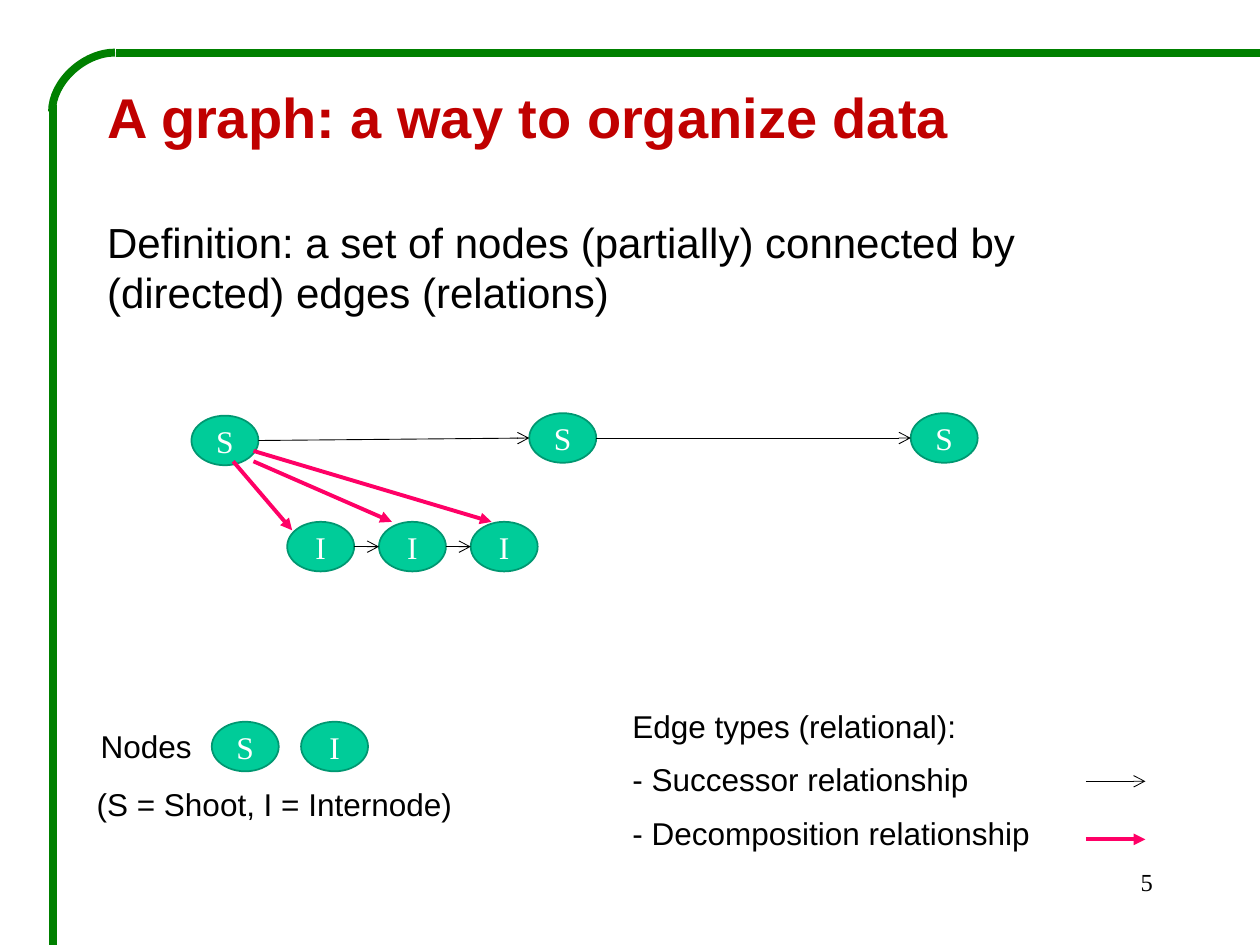
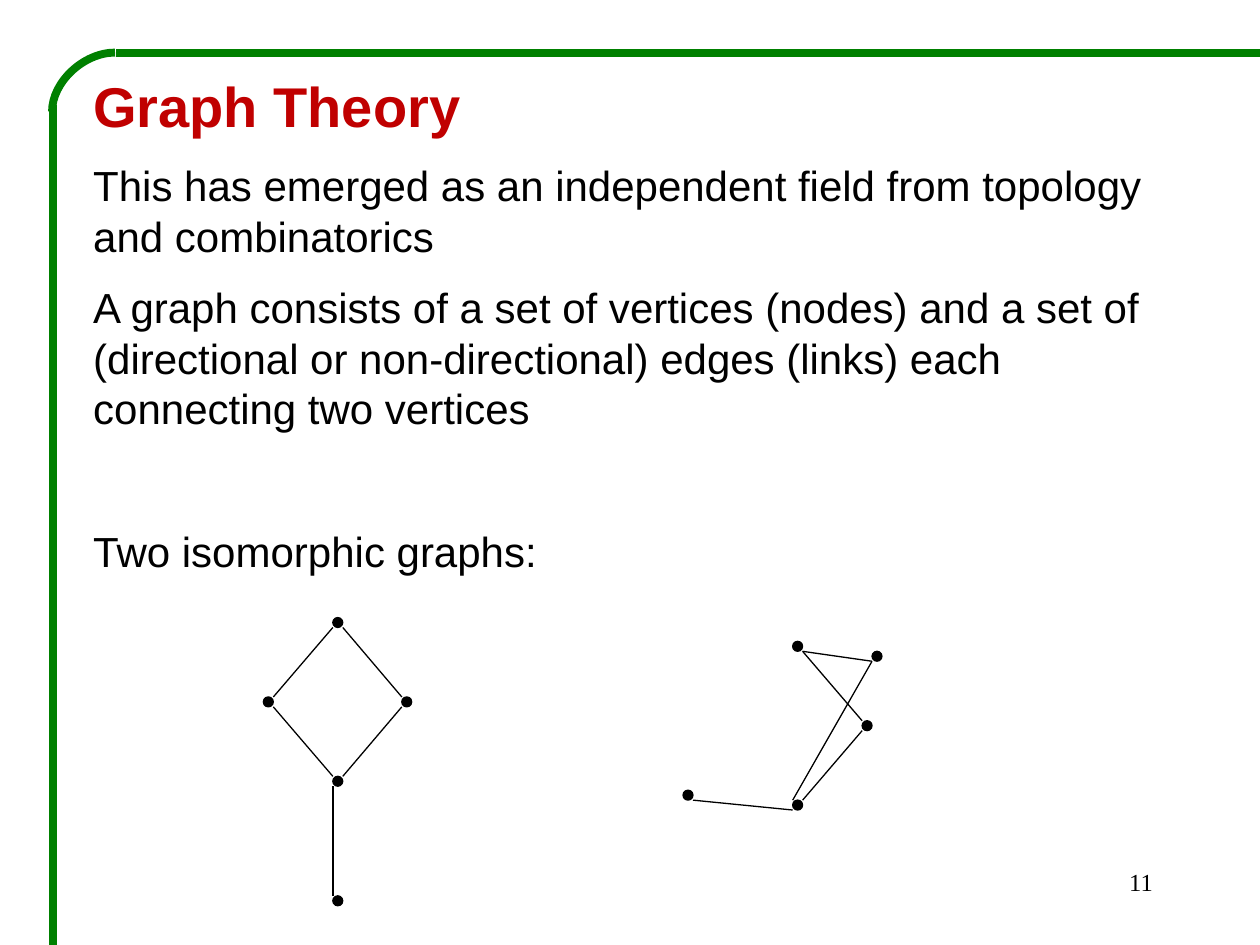
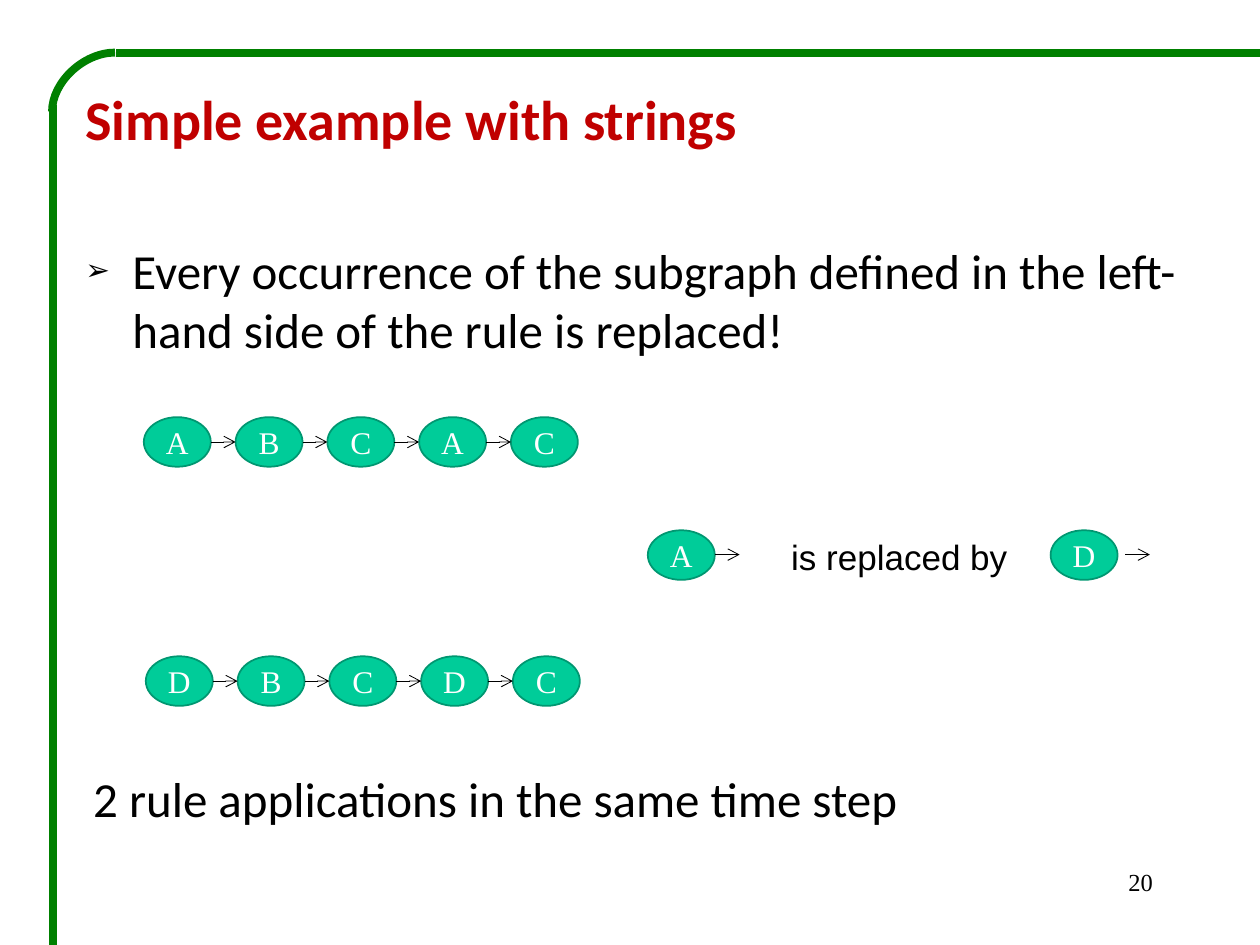
import pptx
import pptx.dml.color
import pptx.enum.shapes
import pptx.enum.text
import pptx.oxml.ns
import pptx.util
from lxml import etree
from pptx.util import Cm

# Shared look
RED, BLACK, WHITE = "C00000", "000000", "FFFFFF"
GREEN, TEAL, DARK_TEAL, PINK = "008000", "00CC99", "009771", "FF0066"
SANS, HUMANIST, SERIF = "Arial", "Calibri", "Times New Roman"

NODE_WIDTH, NODE_HEIGHT, NODE_PITCH = 1.35, 1.0, 1.85
DOT_SIZE = 0.2
ARROW_LENGTH = NODE_PITCH - NODE_WIDTH

# Corners of a dot, as shares of its width and height
TOP_LEFT, TOP_RIGHT, BOTTOM_LEFT, BOTTOM_RIGHT = (0, 0), (1, 0), (0, 1), (1, 1)


def color(hex_code):
    return pptx.dml.color.RGBColor.from_string(hex_code)


def sub(parent, tag, **attributes):
    return etree.SubElement(parent, pptx.oxml.ns.qn(tag), attributes)


# Text
def add_span(para, text, size, font=SANS, hex_code=BLACK, bold=False):
    span = para.add_run()
    span.text = text
    span.font.size = pptx.util.Pt(size)
    span.font.name = font
    span.font.bold = bold
    span.font.color.rgb = color(hex_code)


def add_text_box(page, left, top, width, height, wrap=True):
    frame = page.shapes.add_textbox(Cm(left), Cm(top), Cm(width), Cm(height)).text_frame
    frame.word_wrap = wrap
    return frame


def add_para(frame, text, size, gap=0, **style):
    """Fill the empty first paragraph, or start a new one after a gap in points."""
    para = frame.paragraphs[0]
    if para.runs:
        para = frame.add_paragraph()
    para.space_before = pptx.util.Pt(gap)
    add_span(para, text, size, **style)
    return para


def add_title(frame, text, font=SANS):
    add_para(frame, text, 32, font=font, hex_code=RED, bold=True)


def add_bullet(para, char, percent, indent):
    properties = para._p.get_or_add_pPr()
    properties.set("marL", str(Cm(indent)))
    properties.set("indent", str(-Cm(indent)))
    sub(properties, "a:buSzPct", val=str(percent * 1000))
    sub(properties, "a:buFont", typeface=SANS)
    sub(properties, "a:buChar", char=char)


# Lines
def add_line(page, start, end, hex_code=BLACK, width=0.75, arrow=None,
             kind=pptx.enum.shapes.MSO_CONNECTOR.STRAIGHT):
    line = page.shapes.add_connector(kind, *(Cm(value) for value in (*start, *end)))
    line.line.color.rgb = color(hex_code)
    line.line.width = pptx.util.Pt(width)
    if arrow:
        sub(line.line._get_or_add_ln(), "a:tailEnd", type=arrow)
    sub(line._element.spPr, "a:effectLst")
    return line


def add_successor(page, left, middle, length=ARROW_LENGTH, rise=0):
    add_line(page, (left, middle), (left + length, middle - rise), width=0.5, arrow="arrow")


def add_decomposition(page, start, end):
    add_line(page, start, end, PINK, 2.25, "triangle")


# Nodes
def add_ellipse(page, left, top, width, height, fill, outline, outline_width):
    ellipse = page.shapes.add_shape(
        pptx.enum.shapes.MSO_SHAPE.OVAL, Cm(left), Cm(top), Cm(width), Cm(height))
    ellipse.shadow.inherit = False
    ellipse.fill.solid()
    ellipse.fill.fore_color.rgb = color(fill)
    ellipse.line.color.rgb = color(outline)
    ellipse.line.width = pptx.util.Pt(outline_width)
    return ellipse


def add_node(page, letter, left, top):
    node = add_ellipse(page, left, top, NODE_WIDTH, NODE_HEIGHT, TEAL, DARK_TEAL, 1)
    frame = node.text_frame
    frame.word_wrap = False
    frame.vertical_anchor = pptx.enum.text.MSO_ANCHOR.MIDDLE
    para = add_para(frame, letter, 18, font=SERIF, hex_code=WHITE)
    para.alignment = pptx.enum.text.PP_ALIGN.CENTER


def add_chain(page, letters, left, top):
    for index, letter in enumerate(letters):
        node_left = left + index * NODE_PITCH
        add_node(page, letter, node_left, top)
        if index:
            add_successor(page, node_left - ARROW_LENGTH, top + NODE_HEIGHT / 2)


def add_dot_graph(page, dots, edges):
    for left, top in dots:
        add_ellipse(page, left, top, DOT_SIZE, DOT_SIZE, BLACK, BLACK, 0.75)
    for ends in edges:
        start, end = (
            [place + DOT_SIZE * share for place, share in zip(dots[dot], corner)]
            for dot, corner in ends)
        add_line(page, start, end)


# Page with green frame and number
def add_page(deck, number):
    page = deck.slides.add_slide(deck.slide_layouts[6])
    add_line(page, (25.4, 1.07), (2.34, 1.07), GREEN, 4.5)
    add_line(page, (1.07, 2.11), (1.07, 19.05), GREEN, 4.5)
    corner = add_line(page, (1.09, 1.02), (2.28, 2.29), GREEN, 4.5,
                      kind=pptx.enum.shapes.MSO_CONNECTOR.CURVE)
    properties = corner._element.spPr
    properties.find(pptx.oxml.ns.qn("a:prstGeom")).set("prst", "curvedConnector2")
    properties.find(pptx.oxml.ns.qn("a:xfrm")).set("rot", str(270 * 60000))
    para = add_para(add_text_box(page, 18.21, 17.35, 5.28, 1.27), str(number), 14, font=SERIF)
    para.alignment = pptx.enum.text.PP_ALIGN.RIGHT
    return page


def add_definition_page(deck):
    page = add_page(deck, 5)
    frame = add_text_box(page, 1.91, 1.52, 22.6, 5.03)
    frame.vertical_anchor = pptx.enum.text.MSO_ANCHOR.MIDDLE
    add_title(frame, "A graph: a way to organize data")
    add_para(frame, "Definition: a set of nodes (partially) connected by "
                    "(directed) edges (relations)", 24, gap=38)

    # Shoots and their internodes
    for left, top in ((3.86, 8.38), (10.67, 8.33), (18.36, 8.33)):
        add_node(page, "S", left, top)
    add_successor(page, 5.21, 8.88, 5.46, rise=0.05)
    add_successor(page, 12.02, 8.83, 6.34)
    add_chain(page, "III", 5.79, 10.52)
    add_decomposition(page, (5.11, 9.3), (7.9, 10.52))
    add_decomposition(page, (4.7, 9.3), (5.89, 10.69))
    add_decomposition(page, (5.11, 9.09), (9.91, 10.52))

    # Legend of nodes
    add_para(add_text_box(page, 1.78, 14.53, 2.36, 1.02, wrap=False), "Nodes", 18)
    add_node(page, "S", 4.27, 14.55)
    add_node(page, "I", 6.07, 14.55)
    add_para(add_text_box(page, 1.7, 15.7, 9.2, 1.02), "(S = Shoot, I = Internode)", 18)

    # Legend of edges
    frame = add_text_box(page, 12.5, 14.12, 9.2, 3.33)
    add_para(frame, "Edge types (relational):", 18)
    for relation in ("Successor", "Decomposition"):
        add_para(frame, f"- {relation} relationship", 18, gap=9)
    add_successor(page, 21.89, 15.75, 1.2)
    add_decomposition(page, (21.89, 16.92), (23.09, 16.92))


def add_theory_page(deck):
    page = add_page(deck, 11)
    frame = add_text_box(page, 1.63, 1.32, 23.06, 10.85)
    add_title(frame, "Graph Theory")
    add_para(frame, "This has emerged as an independent field from topology "
                    "and combinatorics", 24, gap=12)
    add_para(frame, "A graph consists of a set of vertices (nodes) and a set of "
                    "(directional or non-directional) edges (links) each "
                    "connecting two vertices", 24, gap=12)
    add_para(frame, "Two isomorphic graphs:", 24, gap=53)

    # Diamond with a tail
    add_dot_graph(
        page,
        [(6.71, 12.45), (5.31, 14.05), (8.1, 14.05), (6.71, 15.65), (6.71, 18.06)],
        [((0, BOTTOM_LEFT), (1, TOP_RIGHT)), ((0, BOTTOM_RIGHT), (2, TOP_LEFT)),
         ((1, BOTTOM_RIGHT), (3, TOP_LEFT)), ((2, BOTTOM_LEFT), (3, TOP_RIGHT)),
         ((3, BOTTOM_LEFT), (4, TOP_LEFT))])
    # Same graph with crossing edges
    add_dot_graph(
        page,
        [(15.98, 12.93), (17.58, 13.13), (17.38, 14.53), (15.98, 16.13), (13.77, 15.93)],
        [((0, BOTTOM_RIGHT), (1, BOTTOM_LEFT)), ((0, BOTTOM_RIGHT), (2, TOP_LEFT)),
         ((1, BOTTOM_LEFT), (3, TOP_LEFT)), ((2, BOTTOM_LEFT), (3, TOP_RIGHT)),
         ((3, BOTTOM_LEFT), (4, BOTTOM_RIGHT))])


def add_strings_page(deck):
    page = add_page(deck, 20)
    frame = add_text_box(page, 1.47, 1.57, 22.86, 5.66)
    add_title(frame, "Simple example with strings", HUMANIST)
    para = add_para(frame, "Every occurrence of the subgraph defined in the left-hand "
                           "side of the rule is replaced!", 28, gap=51, font=HUMANIST)
    add_bullet(para, "➢", 60, 0.95)

    # String before, rule, string after
    add_chain(page, "ABCAC", 2.9, 8.41)
    add_node(page, "A", 13.06, 10.69)
    add_successor(page, 14.41, 11.18)
    add_para(add_text_box(page, 15.7, 10.67, 4.9, 1.12, wrap=False), "is replaced by", 20)
    add_node(page, "D", 21.18, 10.69)
    add_successor(page, 22.68, 11.18)
    add_chain(page, "DBCDC", 2.94, 13.23)
    add_para(add_text_box(page, 1.63, 15.37, 18.47, 1.88),
             "2 rule applications in the same time step", 28, font=HUMANIST)


def main():
    deck = pptx.Presentation()
    deck.slide_width, deck.slide_height = Cm(25.4), Cm(19.05)
    add_definition_page(deck)
    add_theory_page(deck)
    add_strings_page(deck)
    deck.save("out.pptx")


if __name__ == "__main__":
    main()
